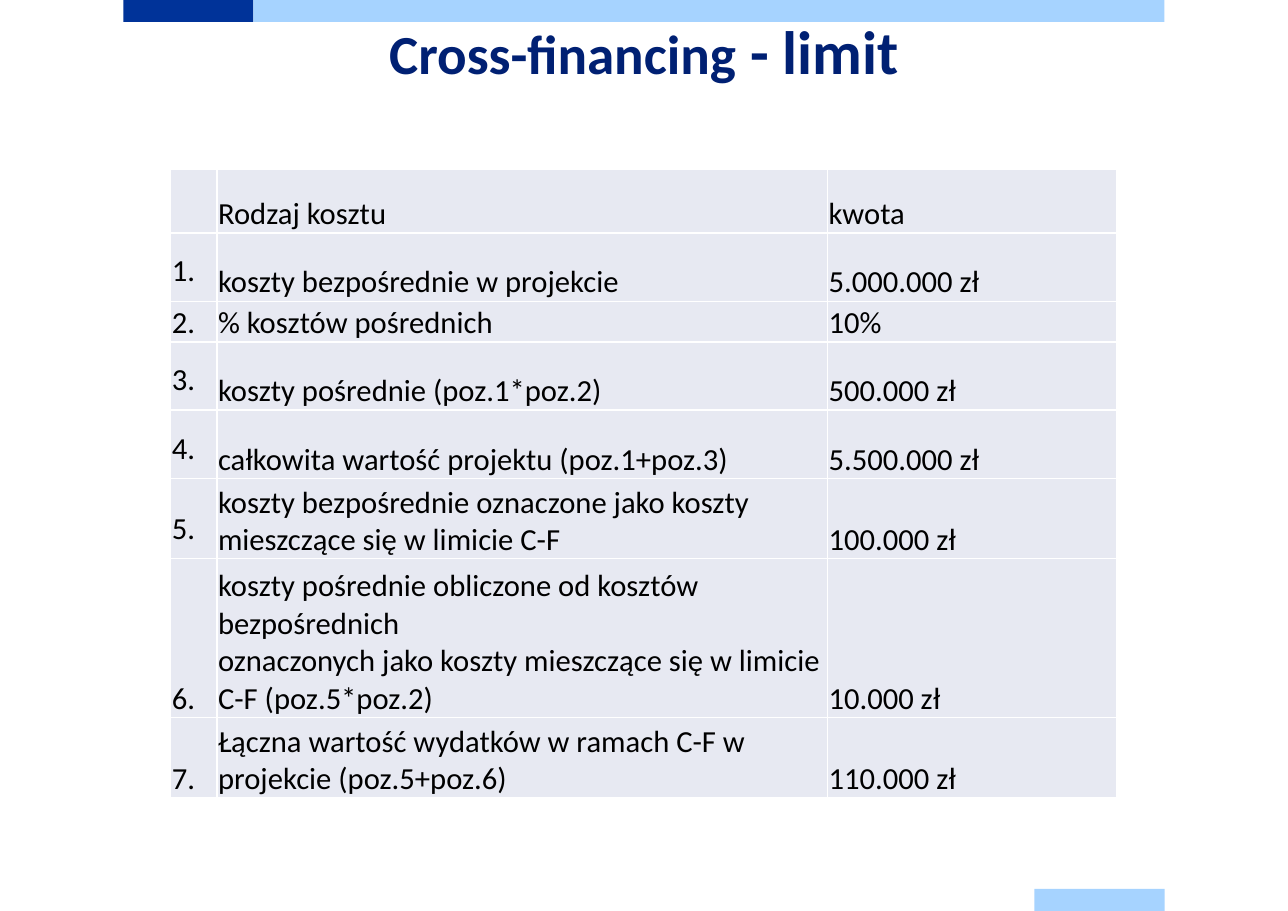
from pptx import Presentation
from pptx.dml.color import RGBColor
from pptx.enum.shapes import MSO_SHAPE
from pptx.enum.text import MSO_ANCHOR, PP_ALIGN
from pptx.oxml import parse_xml
from pptx.oxml.ns import nsdecls
from pptx.util import Pt

FONT = "Calibri"
DARK_BLUE, LIGHT_BLUE, TITLE_BLUE = "003399", "A6D3FF", "002073"
CELL_FILL, WHITE, BLACK = "E7E9F2", "FFFFFF", "000000"

COLUMN_WIDTHS = [30.2, 399, 189.2]
# Row height, inset above and below the row number, cell texts
COST_ROWS = [
    (41.8, 0, ("", "Rodzaj kosztu", "kwota")),
    (44.6, 7.2, ("1.", "koszty bezpośrednie w projekcie", "5.000.000 zł")),
    (26.6, 0, ("2.", "% kosztów pośrednich", "10%")),
    (44.6, 7.2, ("3.", "koszty pośrednie (poz.1*poz.2)", "500.000 zł")),
    (44.6, 7.2, ("4.", "całkowita wartość projektu (poz.1+poz.3)",
                 "5.500.000 zł")),
    (52.6, 7.2, ("5.", "koszty bezpośrednie oznaczone jako koszty "
                 "mieszczące się w limicie C-F", "100.000 zł")),
    (103.7, 0, ("6.", "koszty pośrednie obliczone od kosztów bezpośrednich \n"
                "oznaczonych jako koszty mieszczące się w limicie "
                "C-F (poz.5*poz.2)", "10.000 zł")),
    (52.6, 0, ("7.", "Łączna wartość wydatków w ramach C-F w projekcie "
               "(poz.5+poz.6)", "110.000 zł")),
]


def color(value):
    return RGBColor.from_string(value)


def style_font(font, size, value, bold=False):
    font.name = FONT
    font.size = Pt(size)
    font.bold = bold
    font.color.rgb = color(value)


def add_bar(slide, left, top, width, fill):
    shape = slide.shapes.add_shape(
        MSO_SHAPE.RECTANGLE, Pt(left), Pt(top), Pt(width), Pt(14.4))
    shape.shadow.inherit = False
    shape.fill.solid()
    shape.fill.fore_color.rgb = color(fill)
    shape.line.fill.background()


def add_title(slide, parts):
    box = slide.shapes.add_textbox(Pt(80.6), Pt(20.9), Pt(680.4), Pt(67))
    frame = box.text_frame
    frame.word_wrap = True
    frame.margin_left = frame.margin_right = 0
    frame.margin_top = frame.margin_bottom = 0
    paragraph = frame.paragraphs[0]
    paragraph.alignment = PP_ALIGN.CENTER
    paragraph.line_spacing = Pt(36)
    for text, size in parts:
        run = paragraph.add_run()
        run.text = text
        style_font(run.font, size, TITLE_BLUE, bold=True)


def add_borders(cell):
    properties = cell._tc.get_or_add_tcPr()
    for index, side in enumerate(("lnL", "lnR", "lnT", "lnB")):
        properties.insert(index, parse_xml(
            f'<a:{side} {nsdecls("a")} w="{Pt(1)}"><a:solidFill>'
            f'<a:srgbClr val="{WHITE}"/></a:solidFill></a:{side}>'))


def fill_cell(cell, text, inset):
    cell.fill.solid()
    cell.fill.fore_color.rgb = color(CELL_FILL)
    add_borders(cell)
    cell.vertical_anchor = MSO_ANCHOR.BOTTOM
    cell.margin_left = cell.margin_right = Pt(0.7)
    cell.margin_top = Pt(inset or 0.7)
    cell.margin_bottom = Pt(inset)
    paragraph = cell.text_frame.paragraphs[0]
    paragraph.text = text
    style_font(paragraph.font, 20, BLACK)


def add_cost_table(slide):
    table = slide.shapes.add_table(
        len(COST_ROWS), len(COLUMN_WIDTHS), Pt(111.6), Pt(110.5),
        Pt(sum(COLUMN_WIDTHS)), Pt(sum(row[0] for row in COST_ROWS))).table
    table.first_row = table.horz_banding = False
    for column, width in zip(table.columns, COLUMN_WIDTHS):
        column.width = Pt(width)
    for row, (height, number_inset, texts) in zip(table.rows, COST_ROWS):
        row.height = Pt(height)
        for cell, text, inset in zip(row.cells, texts, (number_inset, 0, 0)):
            fill_cell(cell, text, inset)


def main():
    presentation = Presentation()
    presentation.slide_width = Pt(841.7)
    presentation.slide_height = Pt(595.4)
    slide = presentation.slides.add_slide(presentation.slide_layouts[6])

    # Bars at the top and bottom edges
    add_bar(slide, 80.6, 0, 85, DARK_BLUE)
    add_bar(slide, 165.6, 0, 595.4, LIGHT_BLUE)
    add_bar(slide, 676, 581, 85, LIGHT_BLUE)

    # Title and cost table
    add_title(slide, [("Cross-financing", 36), (" - limit", 40)])
    add_cost_table(slide)

    presentation.save("out.pptx")


if __name__ == "__main__":
    main()
